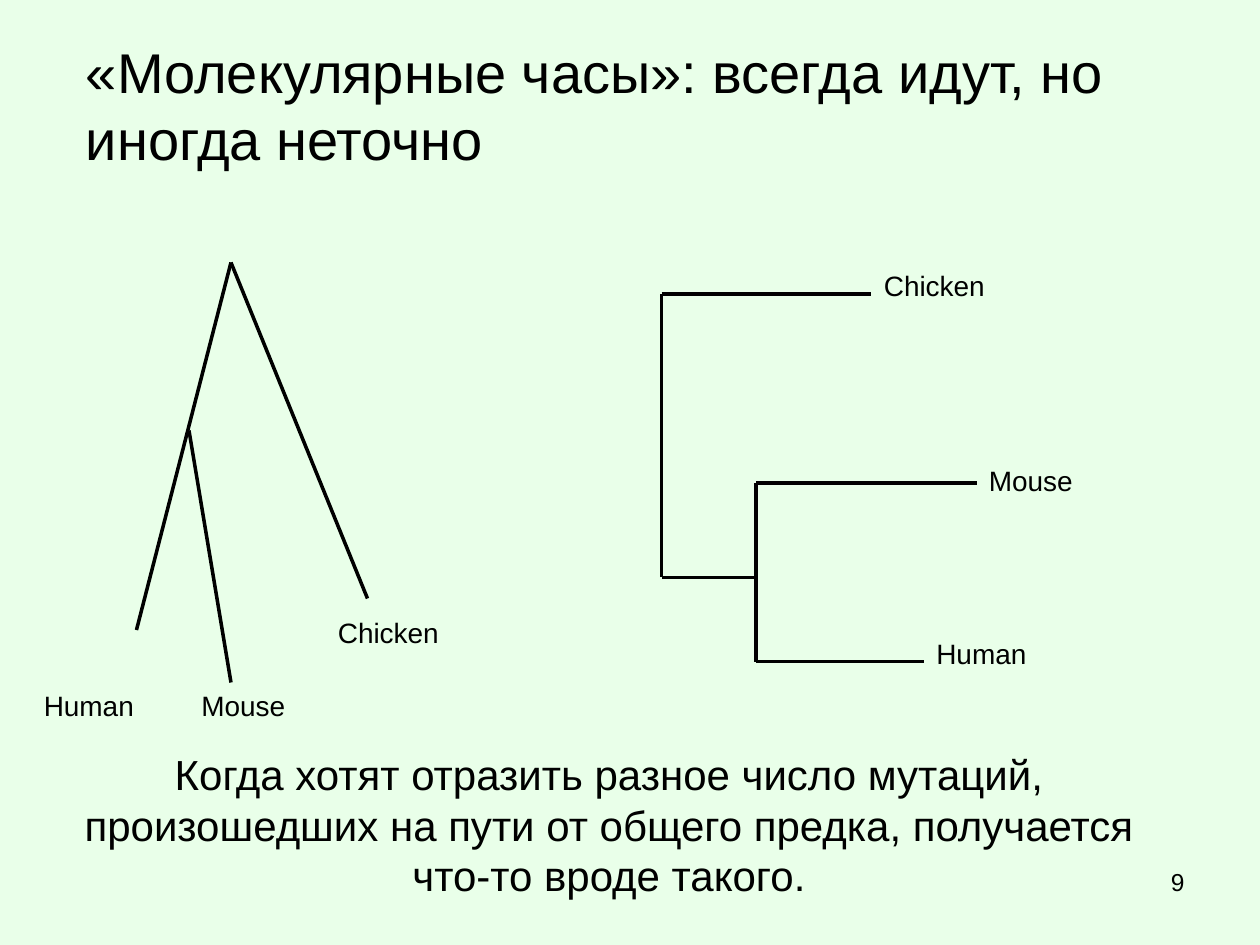
"""Build a slide comparing two phylogenetic trees drawn to the molecular clock."""
from dataclasses import dataclass

from lxml import etree
from pptx import Presentation
from pptx.dml.color import RGBColor
from pptx.enum.shapes import MSO_CONNECTOR
from pptx.enum.text import MSO_ANCHOR, MSO_AUTO_SIZE, PP_ALIGN
from pptx.oxml.ns import qn
from pptx.util import Pt

STRAIGHT = MSO_CONNECTOR.STRAIGHT
TOP, MIDDLE = MSO_ANCHOR.TOP, MSO_ANCHOR.MIDDLE
LEFT, CENTER, RIGHT = PP_ALIGN.LEFT, PP_ALIGN.CENTER, PP_ALIGN.RIGHT
NO_AUTOFIT = MSO_AUTO_SIZE.NONE
PX = 7620


@dataclass(frozen=True)
class Theme:
    background: RGBColor = RGBColor(0xE9, 0xFF, 0xE9)
    ink: RGBColor = RGBColor(0, 0, 0)
    font: str = "Arial"
    heading: int = 32
    caption: int = 24
    label: int = 16
    number: int = 14
    branch: int = 2


theme = Theme()


def write(box, place, text, size, align=LEFT, anchor=TOP):
    box.left, box.top, box.width, box.height = [value * PX for value in place]
    frame = box.text_frame
    frame.word_wrap = True
    frame.auto_size = NO_AUTOFIT
    frame.vertical_anchor = anchor
    para = frame.paragraphs[0]
    para.text = text
    para.alignment = align
    para.font.name = theme.font
    para.font.size = Pt(size)
    para.font.color.rgb = theme.ink


deck = Presentation()
deck.slide_width, deck.slide_height = 1200 * PX, 900 * PX
page = deck.slides.add_slide(deck.slide_layouts[5])
page.background.fill.solid()
page.background.fill.fore_color.rgb = theme.background

write(
    page.shapes.title,
    (40, 710, 1080, 150),
    "Когда хотят отразить разное число мутаций, произошедших на пути "
    "от общего предка, получается что-то вроде такого.",
    theme.caption,
    CENTER,
    MIDDLE,
)

slanted_tree = [
    (220, 250, 130, 600),
    (220, 250, 350, 570),
    (180, 410, 220, 650),
]
square_tree = [
    (630, 280, 630, 550),
    (630, 280, 830, 280),
    (630, 550, 720, 550),
    (720, 460, 720, 630),
    (720, 460, 930, 460),
    (720, 630, 880, 630),
]
for ends in slanted_tree + square_tree:
    branch = page.shapes.add_connector(STRAIGHT, *[value * PX for value in ends])
    branch.line.color.rgb = theme.ink
    branch.line.width = Pt(theme.branch)
    etree.SubElement(branch.element.spPr, qn("a:effectLst"))

label_widths = {"Human": 110, "Mouse": 150, "Chicken": 200}
labels = [
    ("Human", 30, 650),
    ("Chicken", 310, 580),
    ("Mouse", 180, 650),
    ("Human", 880, 600),
    ("Mouse", 930, 436),
    ("Chicken", 830, 250),
]
texts = [
    ((left, top, label_widths[name], 44), name, theme.label, LEFT)
    for name, left, top in labels
]
texts += [
    ((70, 30, 1080, 142), "«Молекулярные часы»: всегда идут, но иногда неточно", theme.heading, LEFT),
    ((860, 820, 280, 62), "9", theme.number, RIGHT),
]
for place, text, size, align in texts:
    write(page.shapes.add_textbox(0, 0, PX, PX), place, text, size, align)

deck.save("out.pptx")
